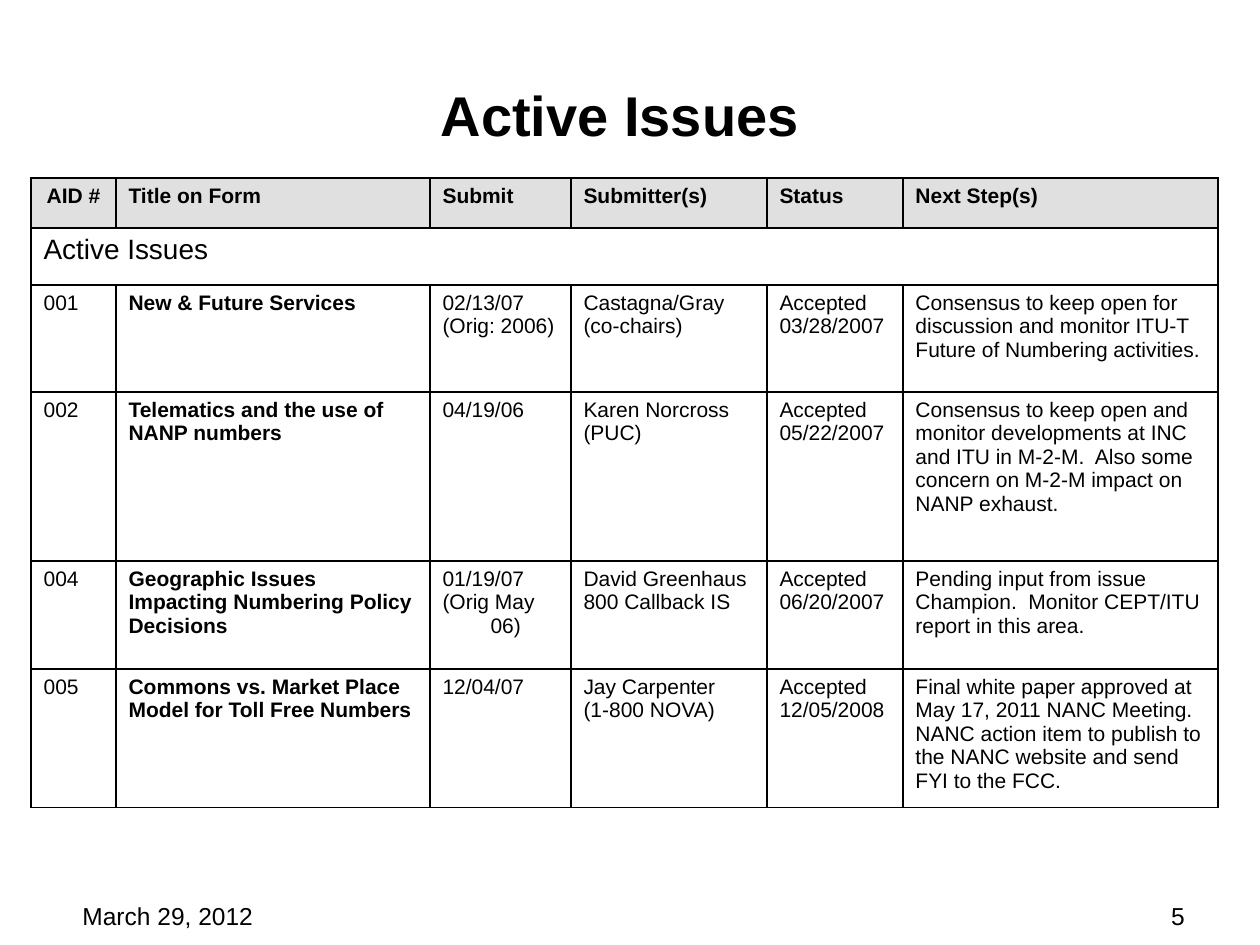
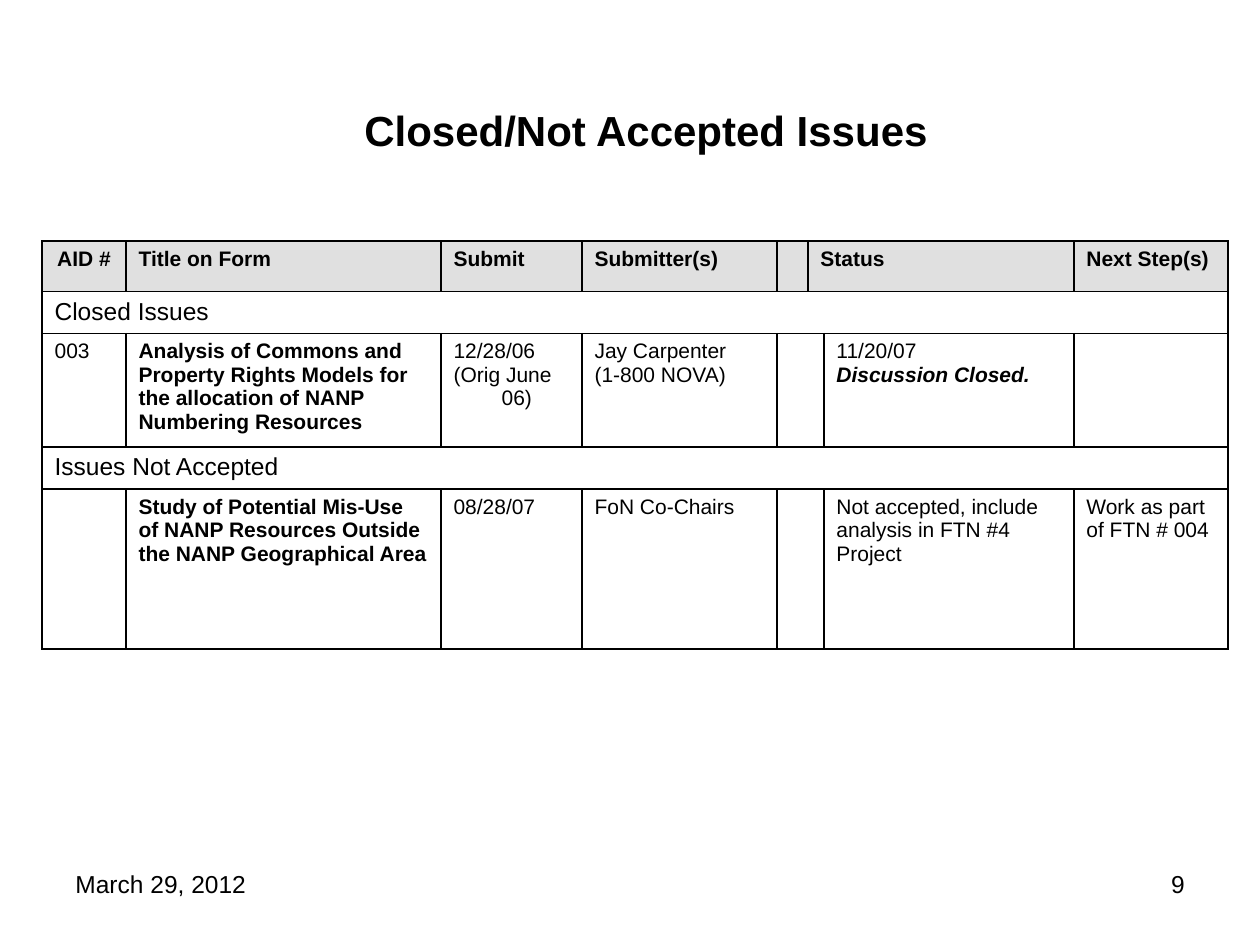
"""Build the two issue-tracking slides, each with a title, a table and a footer."""
from dataclasses import dataclass

from lxml import etree
from pptx import Presentation
from pptx import util as u
from pptx.dml.color import RGBColor
from pptx.enum import text
from pptx.oxml import ns

SCALE = 914400 / 126
FONT = "Arial"
BLACK, WHITE, HEADER_GREY = "000000", "FFFFFF", "E0E0E0"
LEFT, CENTER, RIGHT = text.PP_ALIGN.LEFT, text.PP_ALIGN.CENTER, text.PP_ALIGN.RIGHT
HANG = 48
DATE = "March 29, 2012"
FOOTER_W = 294


@dataclass(frozen=True)
class Label:
    """Text box with one line of text, placed in px."""
    content: str
    x: int
    y: int
    w: int
    h: int
    size: int = 14
    bold: bool = False
    align: text.PP_ALIGN = LEFT
    anchor: text.MSO_ANCHOR = text.MSO_ANCHOR.TOP


@dataclass(frozen=True)
class Cell:
    """Table cell; a newline starts a paragraph and a vertical tab breaks a line."""
    content: str = ""
    bold: bool = False
    hang: bool = False
    align: text.PP_ALIGN = LEFT
    size: int = 12
    fill: str = ""
    span: int = 1
    accent: str = ""


@dataclass(frozen=True)
class IssueTable:
    """Grid of cells with its place and its column and row sizes in px."""
    x: int
    y: int
    cols: list[int]
    heights: list[int]
    rows: list[list[Cell]]


@dataclass(frozen=True)
class IssueSlide:
    """One slide: its labels and its table."""
    labels: list[Label]
    table: IssueTable


def px(n: int) -> u.Emu:
    """Convert px to EMU."""
    return u.Emu(round(n * SCALE))


def rgb(value: str) -> RGBColor:
    """Convert a hex string to a colour."""
    return RGBColor.from_string(value)


def add_run(p, content: str, size: int, bold: bool = False, italic: bool = False) -> None:
    """Append one styled run to a paragraph."""
    r = p.add_run()
    r.text = content
    f = r.font
    f.name, f.size, f.bold, f.italic = FONT, u.Pt(size), bold, italic
    f.color.rgb = rgb(BLACK)


def add_label(s, label: Label) -> None:
    """Draw a text box."""
    sp = s.shapes.add_textbox(px(label.x), px(label.y), px(label.w), px(label.h))
    tf = sp.text_frame
    tf.word_wrap = True
    tf.vertical_anchor = label.anchor
    p = tf.paragraphs[0]
    p.alignment = label.align
    add_run(p, label.content, label.size, label.bold)


def set_borders(cell) -> None:
    """Give a cell thin black lines on all four sides."""
    tc_pr = cell._tc.get_or_add_tcPr()
    for side in ("lnL", "lnR", "lnT", "lnB"):
        ln = etree.SubElement(tc_pr, ns.qn(f"a:{side}"), w=str(u.Pt(1)))
        fill = etree.SubElement(ln, ns.qn("a:solidFill"))
        etree.SubElement(fill, ns.qn("a:srgbClr"), val=BLACK)


def fill_cell(cell, data: Cell) -> None:
    """Write the text of a cell and colour it."""
    if data.fill:
        cell.fill.solid()
        cell.fill.fore_color.rgb = rgb(data.fill)
    tf = cell.text_frame
    for i, line in enumerate(data.content.split("\n")):
        p = tf.add_paragraph() if i else tf.paragraphs[0]
        p.alignment = data.align
        if data.hang:
            p_pr = p._p.get_or_add_pPr()
            p_pr.set("marL", str(px(HANG)))
            p_pr.set("indent", str(-px(HANG)))
        for j, part in enumerate(line.split("\v")):
            if j:
                p.add_line_break()
            add_run(p, part, data.size, data.bold)
    if data.accent:
        p.add_line_break()
        add_run(p, data.accent, data.size, bold=True, italic=True)


def add_issue_table(s, data: IssueTable) -> None:
    """Draw a bordered table with spanning cells."""
    frame = s.shapes.add_table(len(data.heights), len(data.cols), px(data.x), px(data.y),
                               px(sum(data.cols)), px(sum(data.heights)))
    tbl = frame.table
    tbl.first_row = tbl.horz_banding = False
    for col, width in zip(tbl.columns, data.cols):
        col.width = px(width)
    for row, height in zip(tbl.rows, data.heights):
        row.height = px(height)
    for cell in tbl.iter_cells():
        set_borders(cell)
        cell.fill.background()
    for i, row in enumerate(data.rows):
        j = 0
        for item in row:
            cell = tbl.cell(i, j)
            if item.span > 1:
                cell.merge(tbl.cell(i, j + item.span - 1))
            fill_cell(cell, item)
            j += item.span


def head(content: str = "", align: text.PP_ALIGN = LEFT, span: int = 1) -> Cell:
    """Describe a header cell."""
    return Cell(content, bold=True, hang=bool(content), align=align,
                fill=HEADER_GREY, span=span)


def name(content: str) -> Cell:
    """Describe the bold title of an issue."""
    return Cell(content, bold=True)


def hung(content: str) -> Cell:
    """Describe a cell with a hanging indent."""
    return Cell(content, hang=True)


def footer(y: int, h: int, date_x: int, number: str) -> list[Label]:
    """Describe the date and the slide number."""
    return [Label(DATE, date_x, y, FOOTER_W, h),
            Label(number, 903, y, FOOTER_W, h, align=RIGHT)]


def title(content: str, x: int, y: int, w: int, h: int, size: int) -> Label:
    """Describe a slide title."""
    return Label(content, x, y, w, h, size, True, CENTER, text.MSO_ANCHOR.MIDDLE)


LEADING_HEADS = [head("AID #", CENTER), head("Title on Form"), head("Submit"),
                 head("Submitter(s)")]

ACTIVE = IssueSlide(
    [title("Active Issues", 53, 62, 1134, 105, 32), *footer(895, 34, 70, "5")],
    IssueTable(
        31, 178, [85, 314, 141, 196, 136, 315], [50, 57, 107, 169, 108, 130],
        [
            [*LEADING_HEADS, head("Status"), head("Next Step(s)")],
            [Cell("Active Issues", hang=True, size=16, span=6)],
            [hung("001"), name("New & Future Services"),
             hung("02/13/07\n(Orig: 2006)"), hung("Castagna/Gray\n(co-chairs)"),
             Cell("Accepted\n03/28/2007"),
             Cell("Consensus to keep open for discussion and monitor ITU-T "
                  "Future of Numbering activities.")],
            [hung("002"), name("Telematics and the use of NANP numbers"),
             hung("04/19/06"), hung("Karen Norcross\n(PUC)"),
             Cell("Accepted \v05/22/2007"),
             Cell("Consensus to keep open and monitor developments at INC and ITU "
                  "in M-2-M.  Also some concern on M-2-M impact on NANP exhaust.")],
            [hung("004"),
             name("Geographic Issues Impacting Numbering Policy Decisions"),
             hung("01/19/07\n(Orig May 06)"), Cell("David Greenhaus\n800 Callback IS"),
             Cell("Accepted \v06/20/2007"),
             Cell("Pending input from issue Champion.  Monitor CEPT/ITU report "
                  "in this area.")],
            [Cell("005"), name("Commons vs. Market Place Model for Toll Free Numbers"),
             hung("12/04/07"), hung("Jay Carpenter\n(1-800 NOVA)"),
             Cell("Accepted\v12/05/2008"),
             Cell("Final white paper approved at May 17, 2011 NANC Meeting. NANC "
                  "action item to publish to the NANC website and send FYI to the FCC.")],
        ]))

CLOSED = IssueSlide(
    [title("Closed/Not Accepted Issues", 63, 86, 1166, 88, 24), *footer(863, 66, 63, "9")],
    IssueTable(
        42, 241, [84, 315, 141, 195, 31, 16, 250, 154], [48, 41, 113, 41, 160],
        [
            [*LEADING_HEADS, head(), head("Status", span=2), head("Next Step(s)")],
            [Cell("Closed Issues", size=14, fill=WHITE, span=8)],
            [hung("003"),
             name("Analysis of Commons and Property Rights Models for the allocation "
                  "of NANP Numbering Resources"),
             hung("12/28/06\n(Orig June 06)"), hung("Jay Carpenter\n(1-800 NOVA)"),
             Cell(span=2), Cell("11/20/07 ", accent="Discussion Closed."), Cell()],
            [Cell("Issues Not Accepted", hang=True, size=14, span=8)],
            [Cell(),
             name("Study of Potential Mis-Use of NANP Resources Outside the NANP "
                  "Geographical Area"),
             hung("08/28/07"), hung("FoN Co-Chairs"), Cell(span=2),
             Cell("Not accepted, include analysis in FTN #4 Project"),
             Cell("Work as part of FTN # 004")],
        ]))


def main() -> None:
    """Build and save the slides."""
    prs = Presentation()
    prs.slide_width, prs.slide_height = px(1260), px(945)
    for page in (ACTIVE, CLOSED):
        s = prs.slides.add_slide(prs.slide_layouts[6])
        for label in page.labels:
            add_label(s, label)
        add_issue_table(s, page.table)
    prs.save("out.pptx")


if __name__ == "__main__":
    main()
